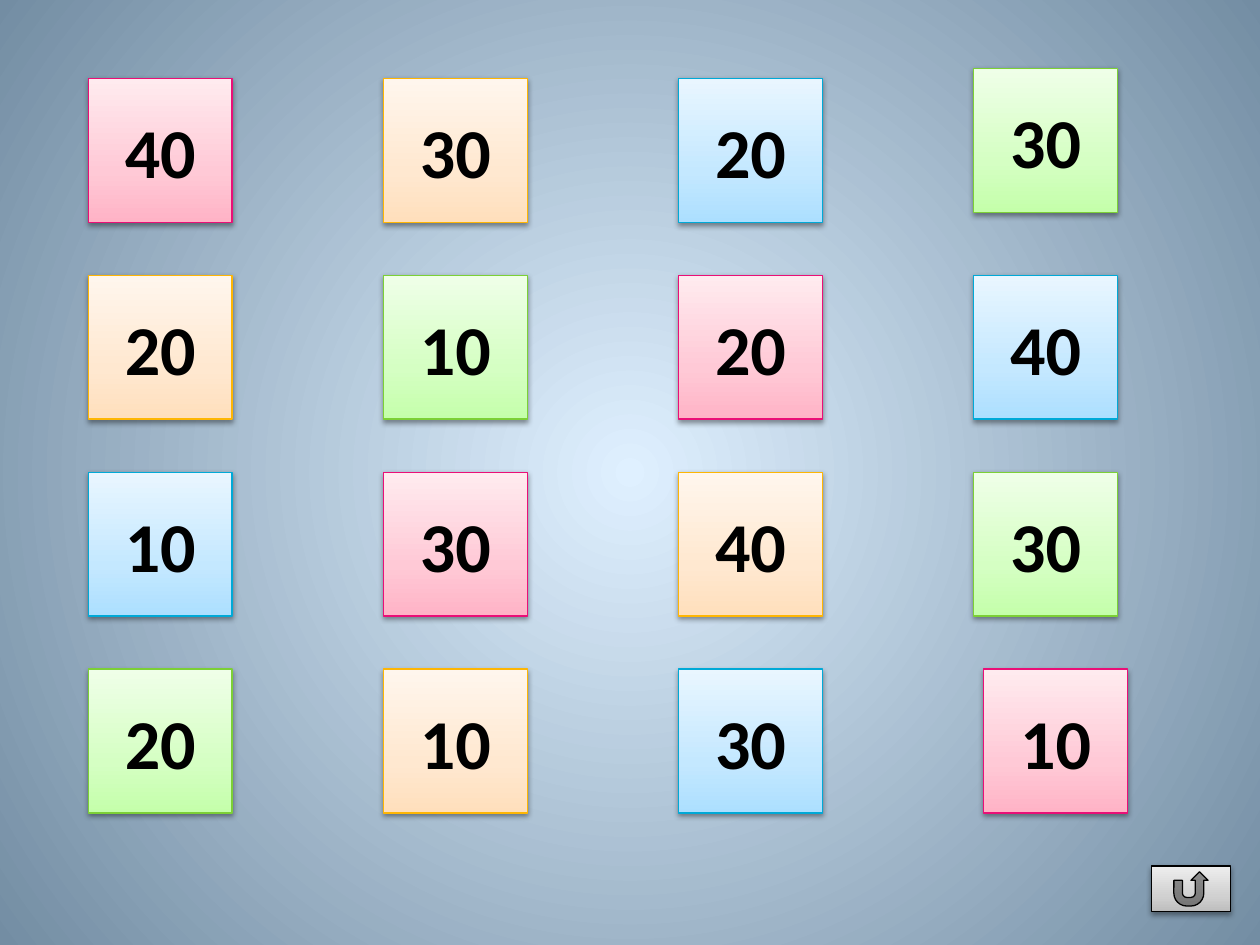
from pptx import Presentation, util as u
from pptx.dml.color import RGBColor
from pptx.enum import shapes, text
from pptx.oxml import parse_xml
from pptx.oxml.ns import nsdecls, qn


def blend(fill, root, stops, way):
    """Give fill, held somewhere under root, the (position, colour) stops in the direction way."""
    fill.gradient()
    old = root.find(".//" + qn("a:gradFill"))
    marks = "".join(
        f'<a:gs pos="{pos * 1000}"><a:srgbClr val="{hue}"/></a:gs>' for pos, hue in stops
    )
    new = parse_xml(
        f'<a:gradFill {nsdecls("a")} rotWithShape="1"><a:gsLst>{marks}</a:gsLst>{way}</a:gradFill>'
    )
    old.getparent().replace(old, new)


def button(kind, left, top, wide, high, hues, edge):
    """Add a shaded button with a thin edge and a soft shadow; lengths are in cm."""
    shape = slide.shapes.add_shape(kind, u.Cm(left), u.Cm(top), u.Cm(wide), u.Cm(high))
    props = shape.element.spPr
    blend(shape.fill, props, zip((0, 35, 100), hues), '<a:lin ang="16200000" scaled="0"/>')
    shape.line.color.rgb = RGBColor.from_string(edge)
    shape.line.width = u.Pt(0.75)
    shape.shadow.inherit = False
    props.find(qn("a:effectLst")).append(parse_xml(
        f'<a:outerShdw {nsdecls("a")} blurRad="40000" dist="20000" dir="5400000" rotWithShape="0">'
        '<a:srgbClr val="000000"><a:alpha val="38000"/></a:srgbClr></a:outerShdw>'
    ))
    return shape


deck = Presentation()
deck.slide_width, deck.slide_height = u.Cm(25.4), u.Cm(19.05)
slide = deck.slides.add_slide(deck.slide_layouts[6])
blend(
    slide.background.fill, slide.element, [(0, "DFF0FF"), (100, "738DA3")],
    '<a:path path="circle"><a:fillToRect l="50000" t="50000" r="50000" b="50000"/></a:path>',
)

# Shades from bottom to top, then the edge
themes = {
    "pink": (("FFB3C6", "FFC9D6", "FFEBEF"), "EA0F77"),
    "orange": (("FFDFBC", "FFE8D0", "FFF6ED"), "FEB604"),
    "blue": (("ACDFFF", "C4E8FF", "E9F6FF"), "00A9D7"),
    "green": (("C4FFAA", "D5FFC3", "EFFFE8"), "7CD036"),
}
board = [
    [("pink", 40), ("orange", 30), ("blue", 20), ("green", 30)],
    [("orange", 20), ("green", 10), ("pink", 20), ("blue", 40)],
    [("blue", 10), ("pink", 30), ("orange", 40), ("green", 30)],
    [("green", 20), ("orange", 10), ("blue", 30), ("pink", 10)],
]
# Two cards sit slightly off the grid: (row, column) to (right, down)
shifts = {(0, 3): (0, -0.2), (3, 3): (0.2, 0)}
side = 2.9

for row, cards in enumerate(board):
    for col, (theme, points) in enumerate(cards):
        right, down = shifts.get((row, col), (0, 0))
        card = button(
            shapes.MSO_SHAPE.ACTION_BUTTON_CUSTOM,
            1.78 + 5.95 * col + right, 1.58 + 3.97 * row + down, side, side, *themes[theme],
        )
        frame = card.text_frame
        frame.vertical_anchor = text.MSO_ANCHOR.MIDDLE
        label = frame.paragraphs[0]
        label.text = str(points)
        label.alignment = text.PP_ALIGN.CENTER
        label.font.name = "Calibri"
        label.font.size = u.Pt(40)
        label.font.bold = True
        label.font.color.rgb = RGBColor.from_string("000000")

button(
    shapes.MSO_SHAPE.ACTION_BUTTON_RETURN, 23.21, 17.46, 1.6, 0.92,
    ("BDBDBD", "D1D1D1", "EEEEEE"), "000000",
)

deck.save("out.pptx")
